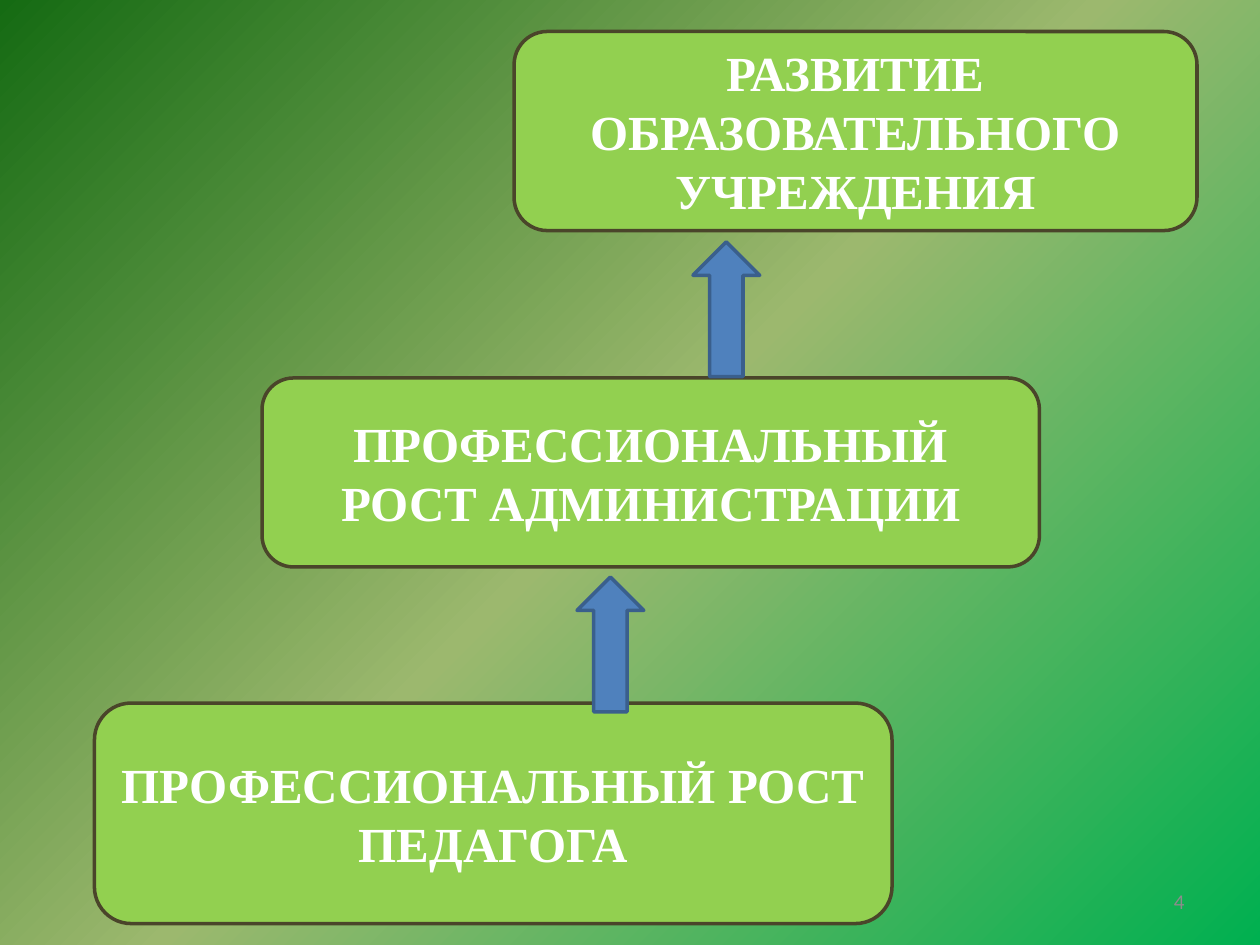
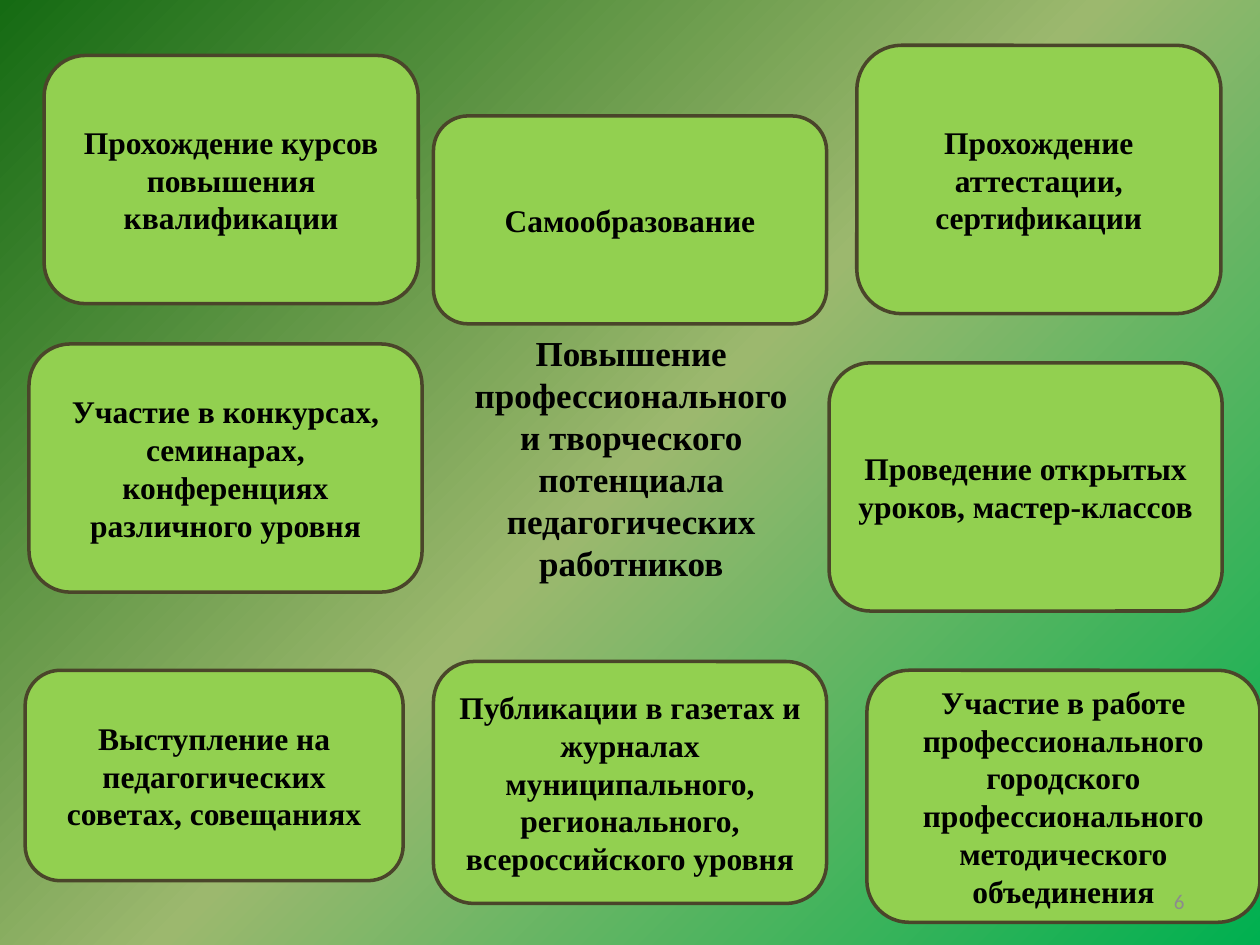
import pptx
import pptx.util
import pptx.oxml
import pptx.oxml.ns
import pptx.dml.color
import pptx.enum.shapes
import pptx.enum.text

Inches = pptx.util.Inches
Pt = pptx.util.Pt
Shape = pptx.enum.shapes.MSO_SHAPE
Align = pptx.enum.text.PP_ALIGN
Anchor = pptx.enum.text.MSO_ANCHOR
qn = pptx.oxml.ns.qn

hues = {
    "leaf": "92D050", "bark": "4A452A", "blue": "4F81BD", "navy": "3A5F8C",
    "white": "FFFFFF", "black": "000000", "gray": "8C8C8C",
    "near": "00B050", "mid": "9CB86E", "far": "156B13",
}
serif = "Times New Roman"


def write(frame, lines, size, hue, font=serif, bold=True, align=Align.CENTER, anchor=Anchor.MIDDLE):
    frame.word_wrap = True
    frame.auto_size = pptx.enum.text.MSO_AUTO_SIZE.NONE
    frame.vertical_anchor = anchor
    frame.text = lines
    for para in frame.paragraphs:
        para.alignment = align
        para.font.name = font
        para.font.size = Pt(size)
        para.font.bold = bold
        para.font.color.rgb = pptx.dml.color.RGBColor.from_string(hues[hue])


def draw(slide, kind, place, fill, line):
    shape = slide.shapes.add_shape(kind, *map(Inches, place))
    shape.shadow.inherit = False
    shape.fill.solid()
    shape.fill.fore_color.rgb = pptx.dml.color.RGBColor.from_string(hues[fill])
    shape.line.color.rgb = pptx.dml.color.RGBColor.from_string(hues[line])
    shape.line.width = Pt(2)
    return shape


deck = pptx.Presentation()
deck.slide_width = Inches(10)
deck.slide_height = Inches(7.5)

master = deck.slide_master
master.background.fill.solid()
back = master.element.find(".//" + qn("p:bgPr"))
stops = "".join(
    f'<a:gs pos="{pos}"><a:srgbClr val="{hues[name]}"/></a:gs>'
    for pos, name in ((0, "near"), (50000, "mid"), (100000, "far"))
)
blend = pptx.oxml.parse_xml(
    f'<a:gradFill {pptx.oxml.ns.nsdecls("a")} rotWithShape="1"><a:gsLst>{stops}</a:gsLst>'
    '<a:path path="circle"><a:fillToRect l="100000" t="100000"/></a:path></a:gradFill>'
)
back.replace(back.find(qn("a:solidFill")), blend)

growth = deck.slides.add_slide(deck.slide_layouts[6])
ways = deck.slides.add_slide(deck.slide_layouts[5])

steps = [
    ((0.75, 5.58, 6.33, 1.75), "ПРОФЕССИОНАЛЬНЫЙ РОСТ ПЕДАГОГА"),
    ((2.08, 3, 6.17, 1.5), "ПРОФЕССИОНАЛЬНЫЙ РОСТ АДМИНИСТРАЦИИ"),
    ((4.08, 0.25, 5.42, 1.58), "РАЗВИТИЕ ОБРАЗОВАТЕЛЬНОГО УЧРЕЖДЕНИЯ"),
]
paths = [
    ((0.35, 0.44, 2.97, 1.97), "Прохождение курсов повышения квалификации"),
    ((0.23, 2.73, 3.12, 1.97), "Участие в конкурсах, семинарах, конференциях различного уровня"),
    ((3.44, 0.92, 3.12, 1.65), "Самообразование"),
    ((0.2, 5.32, 3, 1.67), "Выступление на педагогических советах, совещаниях"),
    ((3.44, 5.25, 3.12, 1.92),
     "Публикации в газетах и журналах муниципального, регионального, всероссийского уровня"),
    ((6.8, 0.36, 2.89, 2.13), "Прохождение аттестации, сертификации"),
    ((6.58, 2.88, 3.12, 1.97), "Проведение открытых уроков, мастер-классов"),
    ((6.88, 5.32, 3.12, 2),
     "Участие в работе профессионального городского профессионального методического объединения"),
]

for slide, boxes, size, hue, number in (
    (growth, steps, 28, "white", "4"),
    (ways, paths, 18, "black", "6"),
):
    for place, words in boxes:
        box = draw(slide, Shape.ROUNDED_RECTANGLE, place, "leaf", "bark")
        write(box.text_frame, words, size, hue)
    label = slide.shapes.add_textbox(Inches(7.17), Inches(6.95), Inches(2.33), Inches(0.4))
    write(label.text_frame, number, 12, "gray", "Calibri", False, Align.RIGHT)

for left, top in ((4.58, 4.58), (5.5, 1.92)):
    draw(growth, Shape.UP_ARROW, (left, top, 0.53, 1.07), "blue", "navy")

title = ways.shapes.title
title.left, title.top, title.width, title.height = map(Inches, (3.53, 2.58, 2.96, 2.12))
write(
    title.text_frame,
    "Повышение профессионального\nи творческого потенциала педагогических работников",
    20, "black", anchor=Anchor.TOP,
)

deck.save("out.pptx")
